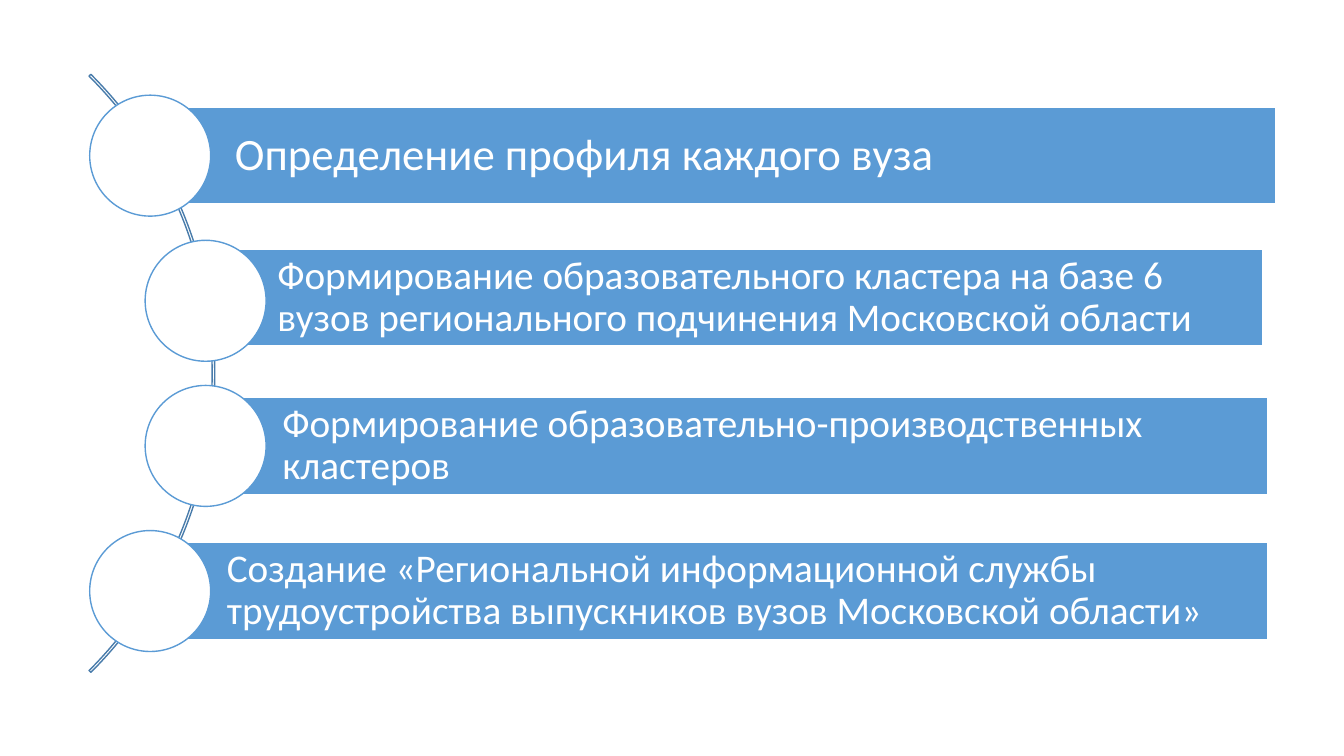
import pptx
import pptx.util
import pptx.dml.color
import pptx.enum.shapes
import pptx.enum.text

Pt = pptx.util.Pt
RGBColor = pptx.dml.color.RGBColor
MSO_SHAPE = pptx.enum.shapes.MSO_SHAPE

BLUE = RGBColor(0x5B, 0x9B, 0xD5)
ARC_BLUE = RGBColor(0x49, 0x7C, 0xAB)
WHITE = RGBColor(0xFF, 0xFF, 0xFF)

CIRCLE = 86.4
BAR_HEIGHT = 69.1
ARC_SIZE = 604.1
ARC_OFFSET = 514.8

STEPS = [
    ("Определение профиля каждого вуза", 32, 0, (5.7, 0)),
    ("Формирование образовательного кластера на базе 6 вузов "
     "регионального подчинения Московской области", 28, 39.6, (-3.6, -2.1)),
    ("Формирование образовательно-производственных кластеров", 28, 39.6, (0, 0)),
    ("Создание «Региональной информационной службы трудоустройства "
     "выпускников вузов Московской области»", 28, 0, (0, 0)),
]


def add_shape(s, kind, left, top, width, height, fill, line):
    sp = s.shapes.add_shape(kind, Pt(left), Pt(top), Pt(width), Pt(height))
    sp.shadow.inherit = False
    if fill is None:
        sp.fill.background()
    else:
        sp.fill.solid()
        sp.fill.fore_color.rgb = fill
    sp.line.color.rgb = line
    sp.line.width = Pt(1)
    return sp


def add_arc(s, left, top, height):
    arc_top = top + (height - ARC_SIZE) / 2
    sp = add_shape(s, MSO_SHAPE.BLOCK_ARC, left - ARC_OFFSET, arc_top,
                   ARC_SIZE, ARC_SIZE, None, ARC_BLUE)
    for i, value in enumerate((189, 27, 0.003)):
        sp.adjustments[i] = value


def add_step(s, left, top, width, text, size, nudge):
    dx, dy = nudge
    sp = add_shape(s, MSO_SHAPE.RECTANGLE, left + CIRCLE / 2 + dx,
                   top + (CIRCLE - BAR_HEIGHT) / 2 + dy,
                   width - CIRCLE / 2, BAR_HEIGHT, BLUE, WHITE)
    tf = sp.text_frame
    tf.word_wrap = True
    tf.vertical_anchor = pptx.enum.text.MSO_ANCHOR.MIDDLE
    tf.margin_left = Pt(54.8)
    tf.margin_right = tf.margin_top = tf.margin_bottom = Pt(size * 0.2)
    p = tf.paragraphs[0]
    p.text = text
    p.alignment = pptx.enum.text.PP_ALIGN.LEFT
    p.line_spacing = 0.9
    p.font.name = "Calibri"
    p.font.size = Pt(size)
    p.font.color.rgb = WHITE
    add_shape(s, MSO_SHAPE.OVAL, left, top, CIRCLE, CIRCLE, WHITE, BLUE)


def add_step_list(s, left, top, width, height):
    add_arc(s, left, top, height)
    pitch = (height - CIRCLE) / (len(STEPS) - 1)
    for i, (text, size, indent, nudge) in enumerate(STEPS):
        add_step(s, left + indent, top + i * pitch, width - indent,
                 text, size, nudge)


def main():
    prs = pptx.Presentation()
    prs.slide_width = Pt(960)
    prs.slide_height = Pt(540)
    s = prs.slides.add_slide(prs.slide_layouts[6])
    add_step_list(s, 64.1, 68, 841.7, 397.4)
    prs.save("out.pptx")


if __name__ == "__main__":
    main()
